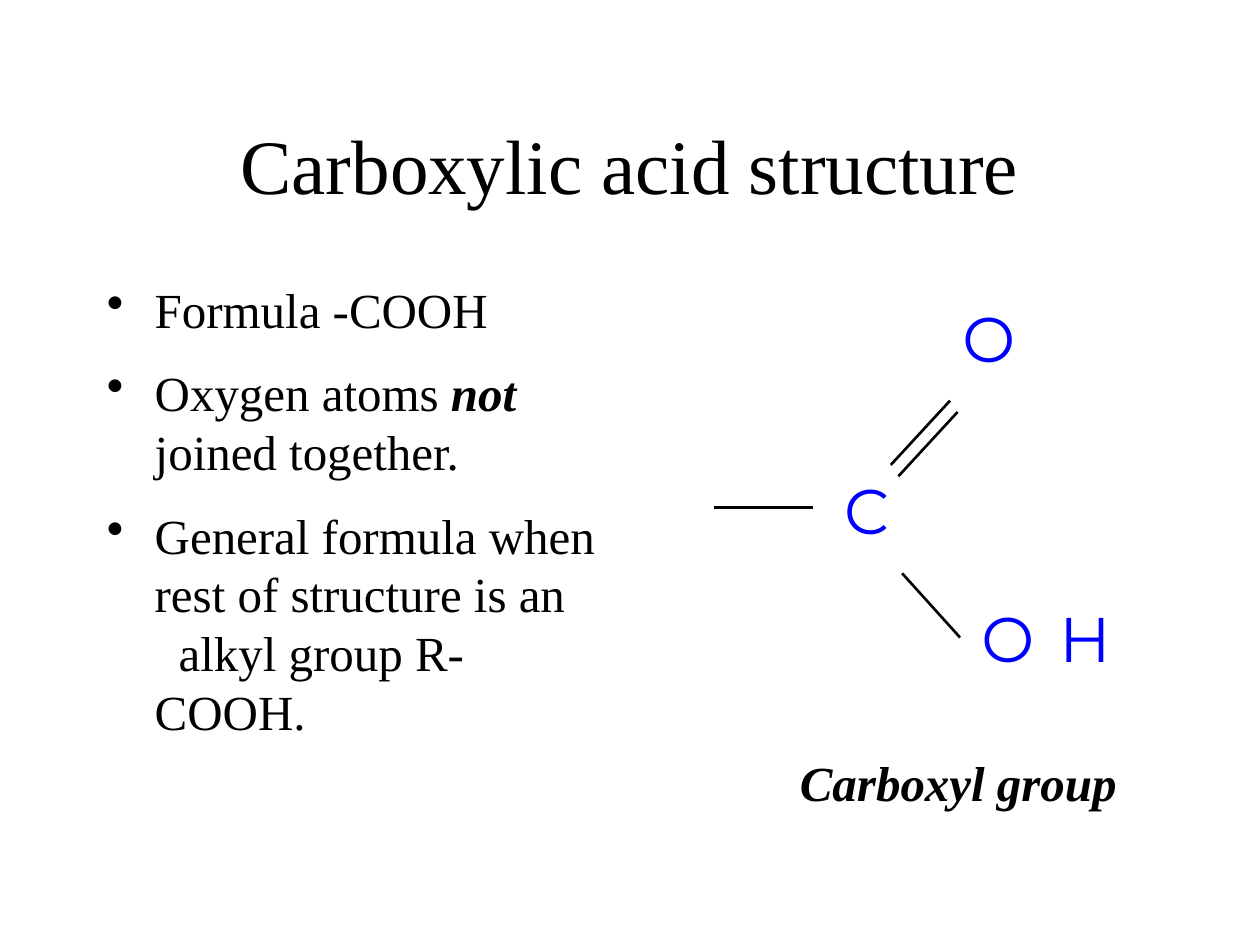
from lxml import etree
from pptx import Presentation
from pptx.dml.color import RGBColor
from pptx.enum.shapes import MSO_CONNECTOR
from pptx.enum.text import MSO_ANCHOR, PP_ALIGN
from pptx.oxml.ns import qn
from pptx.util import Inches, Pt

CENTER, LEFT = PP_ALIGN.CENTER, PP_ALIGN.LEFT
MIDDLE, TOP = MSO_ANCHOR.MIDDLE, MSO_ANCHOR.TOP
STRAIGHT = MSO_CONNECTOR.STRAIGHT

COLORS = {"ink": "000000", "atom": "0000FF"}
SERIF, SANS = "Times New Roman", "Montserrat"
WIDTH, HEIGHT = 10, 7.5
INDENT = 0.38

TITLE = "Carboxylic acid structure"
CAPTION = "Carboxyl group"
POINTS = [
    {"spans": [("Formula -COOH", False)], "bullet": True},
    {"spans": [("Oxygen atoms ", False), ("not", True), (" joined together.", False)], "bullet": True},
    {"spans": [("General formula when rest of structure is an", False)], "bullet": True},
    {"spans": [("alkyl group R-COOH.", False)], "bullet": False},
]
ATOMS = [("C", 6.6, 3.69), ("O", 7.54, 2.33), ("O", 7.69, 4.71), ("H", 8.31, 4.71)]
ATOM_SIZE = (0.52, 0.96)
BONDS = [
    (5.67, 4.03, 6.45, 4.03),
    (7.54, 3.18, 7.07, 3.69),
    (7.6, 3.27, 7.13, 3.78),
    (7.16, 4.55, 7.62, 5.06),
]


def color(name):
    return RGBColor.from_string(COLORS[name])


def add_box(page, left, top, width, height, anchor=TOP, wrap=True):
    box = page.shapes.add_textbox(*map(Inches, (left, top, width, height)))
    box.text_frame.word_wrap = wrap
    box.text_frame.vertical_anchor = anchor
    return box.text_frame


def style(para, size, face=SERIF, ink="ink", align=LEFT):
    para.alignment = align
    para.font.size = Pt(size)
    para.font.name = face
    para.font.color.rgb = color(ink)


def add_label(page, text, place, size, anchor=TOP, wrap=True, **look):
    para = add_box(page, *place, anchor, wrap).paragraphs[0]
    para.text = text
    style(para, size, **look)
    return para


def add_points(page, place):
    frame = add_box(page, *place)
    for index, point in enumerate(POINTS):
        para = frame.add_paragraph() if index else frame.paragraphs[0]
        for text, stressed in point["spans"]:
            span = para.add_run()
            span.text = text
            if stressed:
                span.font.bold = span.font.italic = True
        bulleted = point["bullet"]
        props = para._p.get_or_add_pPr()
        props.set("marL", str(Inches(INDENT)))
        props.set("indent", str(Inches(-INDENT if bulleted else INDENT / 2)))
        if bulleted:
            etree.SubElement(props, qn("a:buChar")).set("char", "•")
        para.space_before = Pt(14 if index and bulleted else 0)
        style(para, 28)


def add_bond(page, ends):
    bond = page.shapes.add_connector(STRAIGHT, *map(Inches, ends))
    bond.line.color.rgb = color("ink")
    bond.line.width = Pt(1.5)
    etree.SubElement(bond._element.spPr, qn("a:effectLst"))


def main():
    """Build the carboxylic acid slide."""
    deck = Presentation()
    deck.slide_width, deck.slide_height = Inches(WIDTH), Inches(HEIGHT)
    page = deck.slides.add_slide(deck.slide_layouts[6])
    margin = WIDTH * 0.075
    add_label(page, TITLE, (margin, 0.67, WIDTH - 2 * margin, 1.25), 44, MIDDLE, align=CENTER)
    add_points(page, (margin, 2.17, 4.17, 4.5))
    for symbol, left, top in ATOMS:
        add_label(page, symbol, (left, top, *ATOM_SIZE), 36, wrap=False,
                  face=SANS, ink="atom", align=CENTER)
    for ends in BONDS:
        add_bond(page, ends)
    caption = add_label(page, CAPTION, (6.25, 5.92, 3.08, 0.57), 28)
    caption.font.bold = caption.font.italic = True
    deck.save("out.pptx")


if __name__ == "__main__":
    main()
